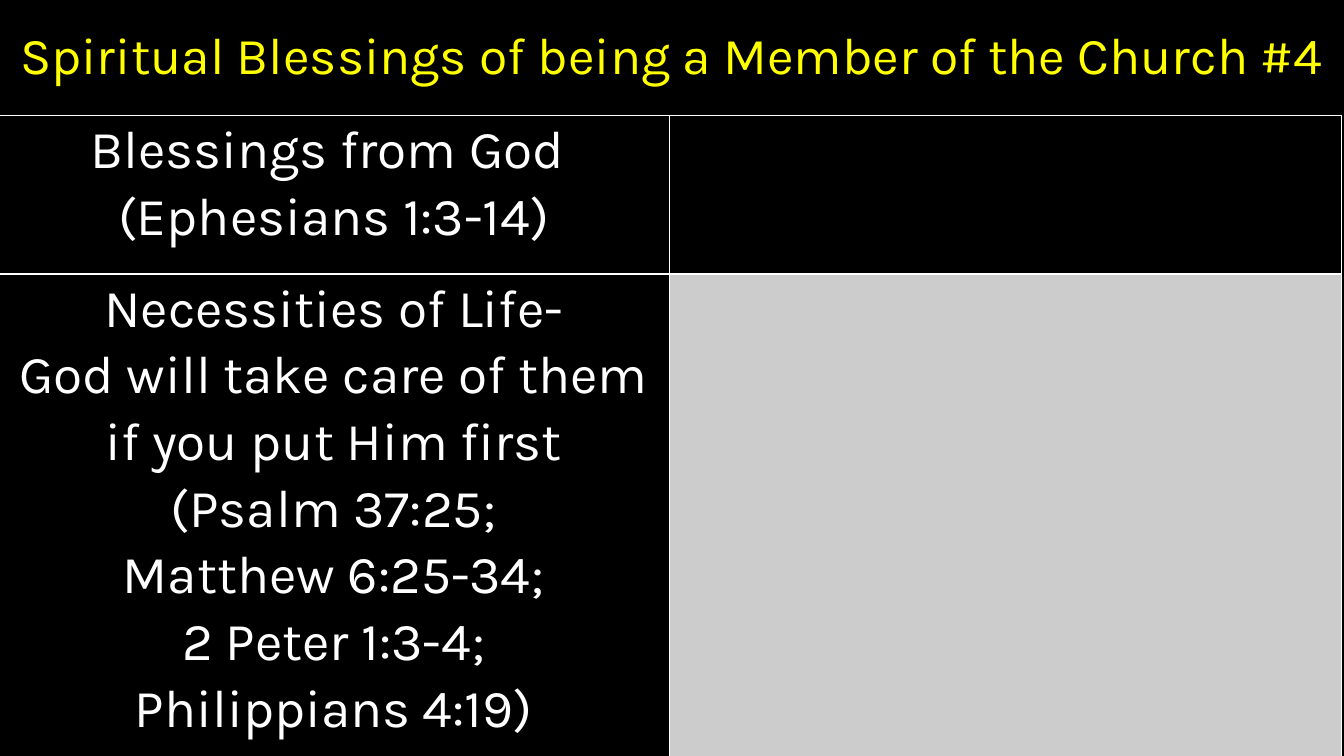
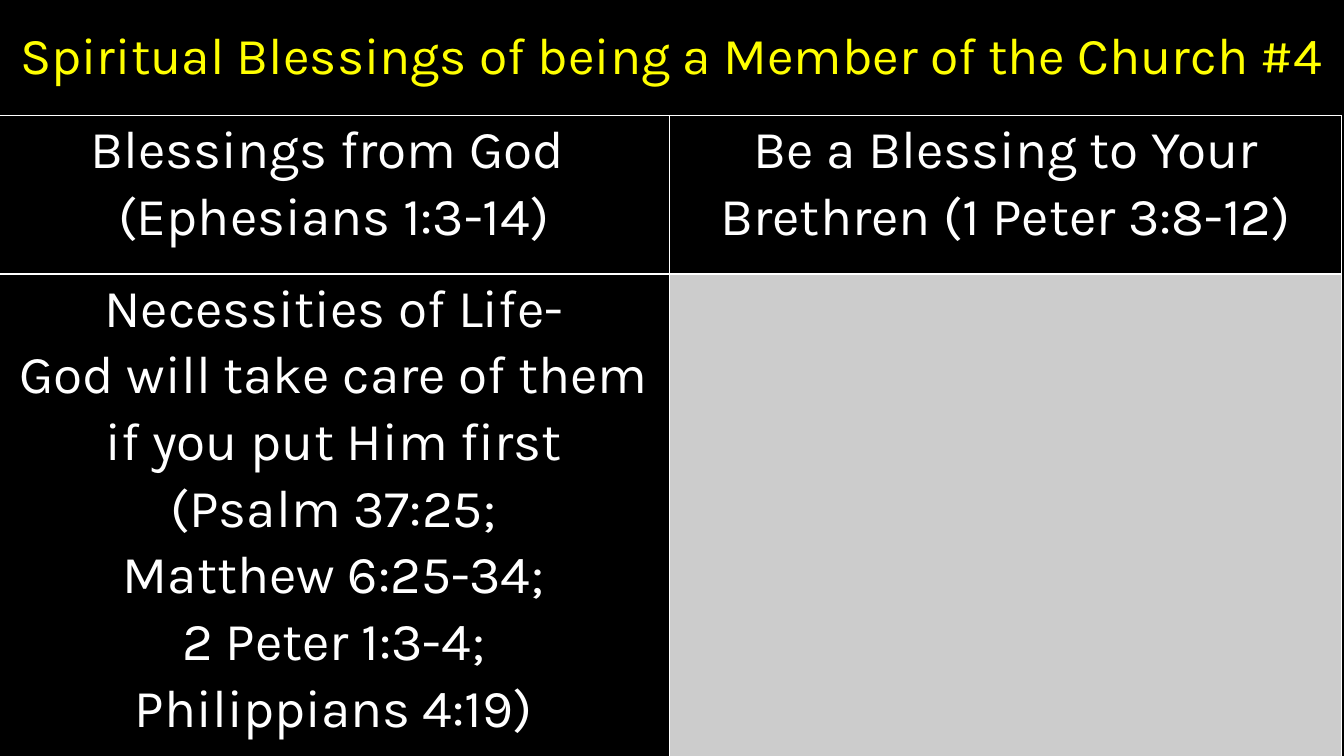
from lxml import etree
from pptx import Presentation
from pptx.dml.color import RGBColor
from pptx.enum import text
from pptx.oxml import ns
from pptx.util import Pt

EMU_PER_PX = 9525
WIDTH, HEIGHT = 1280, 720
TITLE_HEIGHT = 110
TABLE_LEFT = -2
COLUMN_WIDTH = WIDTH // 2
ROW_HEIGHTS = (151, 461)
CELL_MARGIN = 7

FONT = "Karla"
BLACK, WHITE, YELLOW, GRAY = "000000", "FFFFFF", "FFFF00", "CCCCCC"

TITLE = "Spiritual Blessings of being a Member of the Church #4"
FROM_GOD = ["Blessings from God ", "(Ephesians 1:3-14)"]
TO_BRETHREN = ["Be a Blessing to Your Brethren (1 Peter 3:8-12)"]
NECESSITIES = [
    "Necessities of Life-",
    "God will take care of them",
    "if you put Him first",
    "(Psalm 37:25;",
    "Matthew 6:25-34;",
    "2 Peter 1:3-4;",
    "Philippians 4:19)",
]


def px(length):
    """Turn pixels into EMU."""
    return length * EMU_PER_PX


def paint(fill, color):
    """Give a fill one solid colour."""
    fill.solid()
    fill.fore_color.rgb = RGBColor.from_string(color)


def write(frame, lines, size=38, color=WHITE, spacing=1.07):
    """Write centred lines into a text frame, one paragraph each."""
    frame.word_wrap = True
    for index, line in enumerate(lines):
        paragraph = frame.paragraphs[0] if index == 0 else frame.add_paragraph()
        paragraph.alignment = text.PP_ALIGN.CENTER
        paragraph.line_spacing = spacing
        run = paragraph.add_run()
        run.text = line
        run.font.name = FONT
        run.font.size = Pt(size)
        run.font.color.rgb = RGBColor.from_string(color)


def add_borders(cell, color=WHITE, width=1):
    """Draw a solid line on each side of a table cell."""
    properties = cell._tc.get_or_add_tcPr()
    for side in "LRTB":
        line = etree.SubElement(properties, ns.qn(f"a:ln{side}"), w=str(Pt(width)))
        fill = etree.SubElement(line, ns.qn("a:solidFill"))
        etree.SubElement(fill, ns.qn("a:srgbClr"), val=color)


def fill_cell(cell, lines, color):
    """Set the margins, borders, fill and text of a table cell."""
    cell.margin_left = cell.margin_right = px(CELL_MARGIN)
    cell.margin_top = cell.margin_bottom = 0
    add_borders(cell)
    paint(cell.fill, color)
    write(cell.text_frame, lines)


def add_title(slide):
    """Add the title band across the top."""
    box = slide.shapes.add_textbox(0, 0, px(WIDTH), px(TITLE_HEIGHT))
    frame = box.text_frame
    frame.margin_left = frame.margin_right = 0
    frame.vertical_anchor = text.MSO_ANCHOR.MIDDLE
    write(frame, [TITLE], size=36.9, color=YELLOW, spacing=0.9)


def add_blessings_table(slide, rows):
    """Add the two-column table from rows of (lines, fill) pairs."""
    frame = slide.shapes.add_table(
        len(rows), 2, px(TABLE_LEFT), px(TITLE_HEIGHT),
        px(2 * COLUMN_WIDTH), px(sum(ROW_HEIGHTS)))
    table = frame.table
    table.first_row = table.horz_banding = False
    for column in table.columns:
        column.width = px(COLUMN_WIDTH)
    for row, height, contents in zip(table.rows, ROW_HEIGHTS, rows):
        row.height = px(height)
        for cell, (lines, color) in zip(row.cells, contents):
            fill_cell(cell, lines, color)


def add_blessings_slide(presentation, top_right):
    """Add a slide whose top right cell holds the given lines."""
    slide = presentation.slides.add_slide(presentation.slide_layouts[6])
    paint(slide.background.fill, BLACK)
    add_title(slide)
    add_blessings_table(slide, [
        [(FROM_GOD, BLACK), (top_right, BLACK)],
        [(NECESSITIES, BLACK), ([], GRAY)],
    ])


def main():
    """Build and save the presentation."""
    presentation = Presentation()
    presentation.slide_width = px(WIDTH)
    presentation.slide_height = px(HEIGHT)
    for top_right in ([], TO_BRETHREN):
        add_blessings_slide(presentation, top_right)
    presentation.save("out.pptx")


if __name__ == "__main__":
    main()
